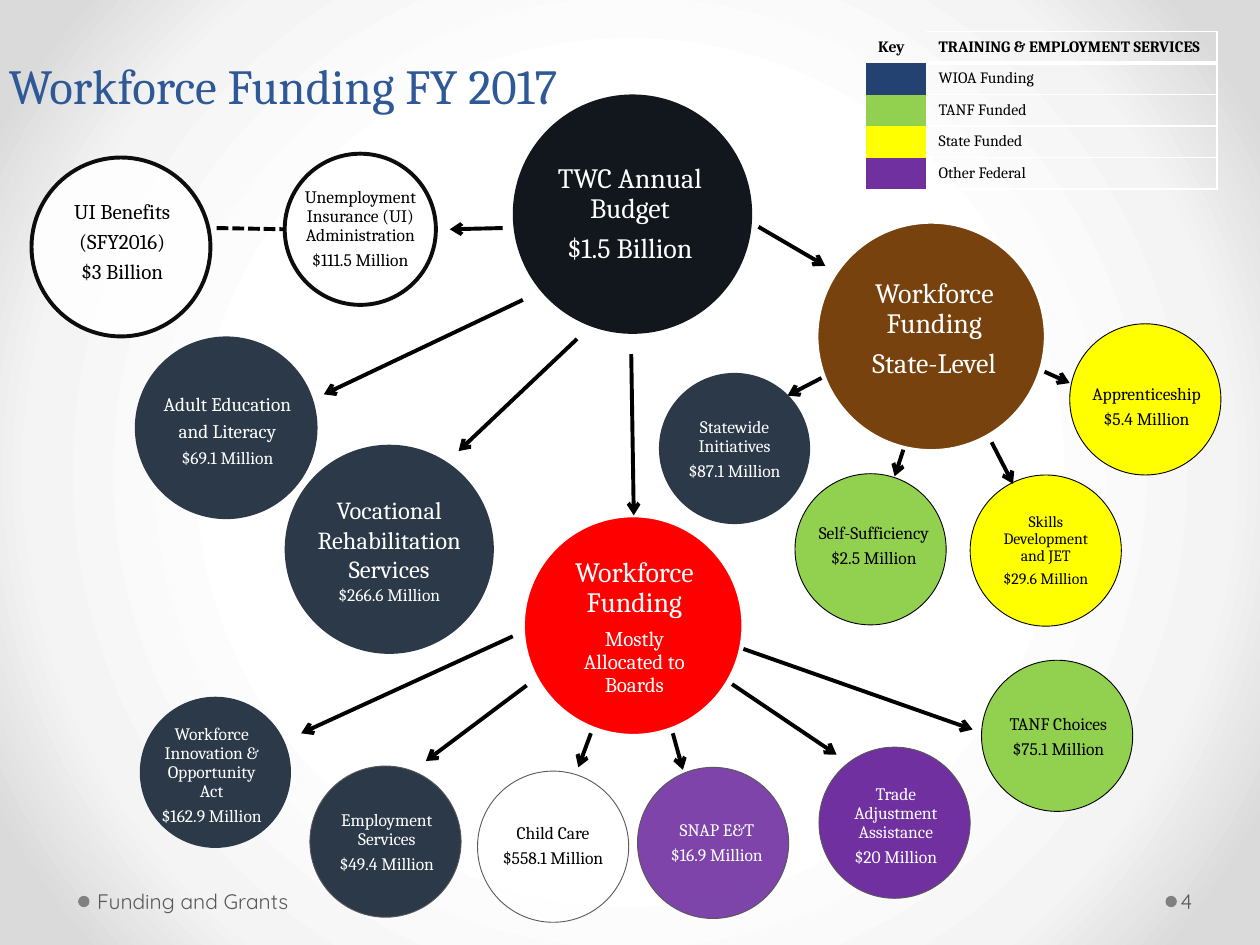
from dataclasses import dataclass
from typing import Optional

import pptx
import pptx.dml.color
import pptx.enum.dml
import pptx.enum.shapes
import pptx.enum.text
import pptx.oxml
import pptx.oxml.ns
import pptx.util

Inches, Pt = pptx.util.Inches, pptx.util.Pt
RGBColor = pptx.dml.color.RGBColor
ALIGN, ANCHOR = pptx.enum.text.PP_ALIGN, pptx.enum.text.MSO_ANCHOR
OVAL = pptx.enum.shapes.MSO_SHAPE.OVAL
NS = pptx.oxml.ns.nsdecls("a", "p")

BLACK = RGBColor(0x00, 0x00, 0x00)
WHITE = RGBColor(0xFF, 0xFF, 0xFF)
INK = RGBColor(0x11, 0x17, 0x1D)
OUTLINE = RGBColor(0x0D, 0x0D, 0x0D)
SLATE = RGBColor(0x2B, 0x39, 0x49)
RED = RGBColor(0xFF, 0x00, 0x00)
BROWN = RGBColor(0x77, 0x42, 0x0D)
GREEN = RGBColor(0x92, 0xD0, 0x50)
YELLOW = RGBColor(0xFF, 0xFF, 0x00)
PURPLE = RGBColor(0x70, 0x30, 0xA0)
NAVY = RGBColor(0x23, 0x42, 0x71)
TITLE_BLUE = RGBColor(0x2F, 0x58, 0x97)
GREY = RGBColor(0x59, 0x59, 0x59)
DOT_GREY = RGBColor(0x80, 0x80, 0x80)


@dataclass
class Bubble:
    left: float
    top: float
    size: float
    fill: RGBColor
    label: tuple  # left, top, width, height of the text
    lines: list  # (text, points)
    ink: RGBColor = WHITE
    line: Optional[RGBColor] = None
    weight: float = 0.5
    alpha: int = 100
    spacing: float = 0.9
    gap: float = 0.35  # space after, as a share of the text size


@dataclass
class Arrow:
    x1: float
    y1: float
    x2: float
    y2: float
    dashed: bool = False


def same(size: float, *texts: str) -> list:
    return [(text, size) for text in texts]


BUBBLES = [
    # Budget and its two funding pools
    Bubble(4.07, 0.75, 1.9, INK, (4.33, 1.08, 1.34, 1.24),
           same(16, "TWC Annual Budget", "$1.5 Billion")),
    Bubble(4.15, 4.09, 1.75, RED, (4.47, 4.4, 1.13, 1.16),
           [("Workforce Funding", 16), ("Mostly Allocated to Boards", 12)], line=WHITE, weight=2.25),
    Bubble(6.48, 1.76, 1.82, BROWN, (6.87, 2.02, 1.09, 1.19),
           same(16, "Workforce Funding", "State-Level"), line=WHITE, weight=2.25),
    # Allocated to boards
    Bubble(7.79, 5.24, 1.2, GREEN, (7.97, 5.42, 0.86, 0.86),
           same(10, "TANF Choices", "$75.1 Million"), BLACK, BLACK),
    Bubble(3.79, 6.12, 1.2, WHITE, (3.96, 6.29, 0.86, 0.86),
           same(10, "Child Care", "$558.1 Million"), BLACK, GREY, alpha=90),
    Bubble(5.06, 6.09, 1.2, PURPLE, (5.26, 6.26, 0.86, 0.86),
           same(10, "SNAP E&T", "$16.9 Million"), line=GREY, alpha=90),
    Bubble(1.11, 5.53, 1.2, SLATE, (1.2, 5.73, 0.96, 0.86),
           same(10, "Workforce Innovation & Opportunity Act", "$162.9 Million")),
    Bubble(2.46, 6.08, 1.2, SLATE, (2.64, 6.26, 0.86, 0.86),
           same(10, "Employment Services", "$49.4 Million"), line=GREY),
    Bubble(6.5, 5.93, 1.2, PURPLE, (6.68, 6.13, 0.86, 0.86),
           same(10, "Trade Adjustment Assistance", "$20 Million"), line=GREY),
    # State level
    Bubble(7.7, 3.77, 1.2, YELLOW, (7.87, 3.94, 0.86, 0.86),
           same(9, "Skills Development and JET", "$29.6 Million"), BLACK, BLACK),
    Bubble(6.31, 3.76, 1.2, GREEN, (6.39, 3.91, 1.09, 0.86),
           same(10, "Self-Sufficiency", "$2.5 Million"), BLACK, BLACK),
    Bubble(8.49, 2.57, 1.2, YELLOW, (8.5, 2.8, 1.2, 0.86),
           same(10, "Apprenticeship", "$5.4 Million"), BLACK, BLACK),
    Bubble(5.23, 2.96, 1.2, SLATE, (5.4, 3.14, 0.86, 0.86),
           same(10, "Statewide Initiatives", "$87.1 Million")),
    # Other programs
    Bubble(0.25, 1.25, 1.42, WHITE, (0.31, 1.42, 1.32, 1.01),
           same(12, "UI Benefits", "(SFY2016)", "$3 Billion"), BLACK, OUTLINE, 2.25, 90),
    Bubble(2.26, 1.22, 1.2, WHITE, (2.26, 1.39, 1.2, 0.86),
           same(10, "Unemployment Insurance (UI) Administration", "$111.5 Million"),
           BLACK, OUTLINE, 2.25, 90),
    Bubble(1.07, 2.67, 1.45, SLATE, (1.15, 2.97, 1.31, 0.91),
           same(11, "Adult Education", "and Literacy") + same(10, "$69.1 Million")),
    Bubble(2.26, 3.53, 1.66, SLATE, (2.26, 3.77, 1.66, 1.19),
           same(14, "Vocational", "Rehabilitation", "Services") + same(10, "$266.6 Million"),
           spacing=1.0, gap=0),
]

ARROWS = [
    # From the boards' funding
    Arrow(4.69, 5.82, 4.59, 6.09), Arrow(5.34, 5.82, 5.42, 6.11),
    Arrow(4.18, 5.44, 3.38, 6.04), Arrow(5.81, 5.43, 6.64, 5.99),
    Arrow(4.07, 5.05, 2.39, 5.82), Arrow(5.9, 5.15, 7.72, 5.79),
    # From the state-level funding
    Arrow(8.29, 2.95, 8.49, 3.04), Arrow(7.17, 3.57, 7.1, 3.78),
    Arrow(6.52, 3, 6.25, 3.14), Arrow(7.87, 3.51, 8.04, 3.84),
    # From the annual budget
    Arrow(3.99, 1.81, 3.57, 1.82), Arrow(6.02, 1.8, 6.55, 2.11),
    Arrow(4.15, 2.38, 2.57, 3.13), Arrow(4.58, 2.69, 3.64, 3.58),
    Arrow(5.01, 2.81, 5.03, 4.09), Arrow(1.72, 1.81, 2.26, 1.82, dashed=True),
]

KEY = [(None, "TRAINING & EMPLOYMENT SERVICES"), (NAVY, "WIOA Funding"), (GREEN, "TANF Funded"),
       (YELLOW, "State Funded"), (PURPLE, "Other Federal")]


def apply(obj, values: dict) -> None:
    for name, value in values.items():
        setattr(obj, name, value)


def write(p, text: str, size: float, color: RGBColor, font: str = "Cambria", bold: bool = False) -> None:
    r = p.add_run()
    r.text = text
    apply(r.font, {"name": font, "size": Pt(size), "bold": bold})
    r.font.color.rgb = color


def add_box(s, box: tuple, inset: float = 0.03):
    tf = s.shapes.add_textbox(*map(Inches, box)).text_frame
    apply(tf, {"word_wrap": True, "vertical_anchor": ANCHOR.MIDDLE, "margin_left": Inches(inset),
               "margin_right": Inches(0.03), "margin_top": Inches(0.03), "margin_bottom": Inches(0.03)})
    return tf


def add_circle(s, left: float, top: float, size: float, fill: RGBColor):
    sp = s.shapes.add_shape(OVAL, *map(Inches, (left, top, size, size)))
    sp.shadow.inherit = False
    sp.fill.solid()
    sp.fill.fore_color.rgb = fill
    sp.line.fill.background()
    return sp


def add_bubble(s, b: Bubble) -> None:
    sp = add_circle(s, b.left, b.top, b.size, b.fill)
    if b.line is not None:
        sp.line.color.rgb = b.line
        sp.line.width = Pt(b.weight)
    if b.alpha < 100:
        color = sp.fill._xPr.find(".//" + pptx.oxml.ns.qn("a:srgbClr"))
        color.append(pptx.oxml.parse_xml(f'<a:alpha {NS} val="{b.alpha * 1000}"/>'))
    tf = add_box(s, b.label)
    for i, (text, size) in enumerate(b.lines):
        p = tf.add_paragraph() if i else tf.paragraphs[0]
        apply(p, {"alignment": ALIGN.CENTER, "line_spacing": b.spacing, "space_after": Pt(b.gap * size)})
        write(p, text, size, b.ink)


def add_arrow(s, a: Arrow) -> None:
    sp = s.shapes.add_connector(pptx.enum.shapes.MSO_CONNECTOR.STRAIGHT,
                                *map(Inches, (a.x1, a.y1, a.x2, a.y2)))
    sp.line.color.rgb = BLACK
    sp.line.width = Pt(2.25)
    if a.dashed:
        sp.line.dash_style = pptx.enum.dml.MSO_LINE.SQUARE_DOT
    else:
        sp.line._get_or_add_ln().append(pptx.oxml.parse_xml(f'<a:tailEnd {NS} type="arrow"/>'))
    sp._element.spPr.append(pptx.oxml.parse_xml(f"<a:effectLst {NS}/>"))


def format_cell(cell, fill: Optional[RGBColor], borders: dict) -> None:
    tcPr = cell._tc.get_or_add_tcPr()
    for side in "LRTB":
        width = borders.get(side, 0)
        paint = '<a:solidFill><a:srgbClr val="FFFFFF"/></a:solidFill>' if width else "<a:noFill/>"
        tcPr.append(pptx.oxml.parse_xml(f'<a:ln{side} {NS} w="{Pt(width)}">{paint}</a:ln{side}>'))
    if fill is None:
        cell.fill.background()
    else:
        cell.fill.solid()
        cell.fill.fore_color.rgb = fill
    apply(cell, {"vertical_anchor": ANCHOR.MIDDLE, "margin_top": 0, "margin_bottom": 0})


def add_key(s) -> None:
    row_height = 0.25
    table = s.shapes.add_table(len(KEY), 2, Inches(6.87), Inches(0.25), Inches(2.79),
                               Inches(row_height * len(KEY))).table
    apply(table, {"first_row": False, "horz_banding": False})
    for column, width in zip(table.columns, (0.48, 2.31)):
        column.width = Inches(width)
    for i, (fill, text) in enumerate(KEY):
        swatch, name = table.cell(i, 0), table.cell(i, 1)
        format_cell(swatch, fill, {})
        format_cell(name, None, {"T": 3 if i == 1 else 1, "R": 1, "B": 1 if i else 3})
        write(name.text_frame.paragraphs[0], text, 9, BLACK, bold=i == 0)
        swatch.text_frame.paragraphs[0].font.size = Pt(9)
    write(table.cell(0, 0).text_frame.paragraphs[0], "Key", 9, BLACK, bold=True)


def main() -> None:
    prs = pptx.Presentation()
    apply(prs, {"slide_width": Inches(10), "slide_height": Inches(7.5)})
    s = prs.slides.add_slide(prs.slide_layouts[5])

    # Radial background
    stops = "".join(f'<a:gs pos="{pos * 1000}"><a:srgbClr val="{c}"/></a:gs>'
                    for pos, c in ((50, "FFFFFF"), (76, "F4F4F4"), (92, "DADADA")))
    s._element.cSld.insert(0, pptx.oxml.parse_xml(
        f'<p:bg {NS}><p:bgPr><a:gradFill rotWithShape="1"><a:gsLst>{stops}</a:gsLst><a:path path="circle">'
        '<a:fillToRect l="50000" t="50000" r="50000" b="50000"/></a:path></a:gradFill>'
        '<a:effectLst/></p:bgPr></p:bg>'))

    # Title
    title = s.shapes.title
    apply(title, {"left": Inches(-0.03), "top": Inches(0.02), "width": Inches(6.89), "height": Inches(0.94)})
    apply(title.text_frame, {"vertical_anchor": ANCHOR.BOTTOM, "word_wrap": True,
                             "auto_size": pptx.enum.text.MSO_AUTO_SIZE.NONE})
    p = title.text_frame.paragraphs[0]
    apply(p, {"alignment": ALIGN.LEFT, "line_spacing": Pt(58)})
    write(p, "Workforce Funding FY 2017", 28, TITLE_BLUE)

    # Footer and page number, each after a dot
    for dot, box, inset, text in ((0.62, (0.72, 6.95, 3.11, 0.4), 0.05, "Funding and Grants"),
                                  (9.25, (9.34, 6.95, 0.61, 0.4), 0.03, "4")):
        add_circle(s, dot, 7.11, 0.09, DOT_GREY)
        write(add_box(s, box, inset).paragraphs[0], text, 12, GREY, "Quicksand")

    # Funding map and its key
    for bubble in BUBBLES:
        add_bubble(s, bubble)
    for arrow in ARROWS:
        add_arrow(s, arrow)
    add_key(s)
    prs.save("out.pptx")


if __name__ == "__main__":
    main()
